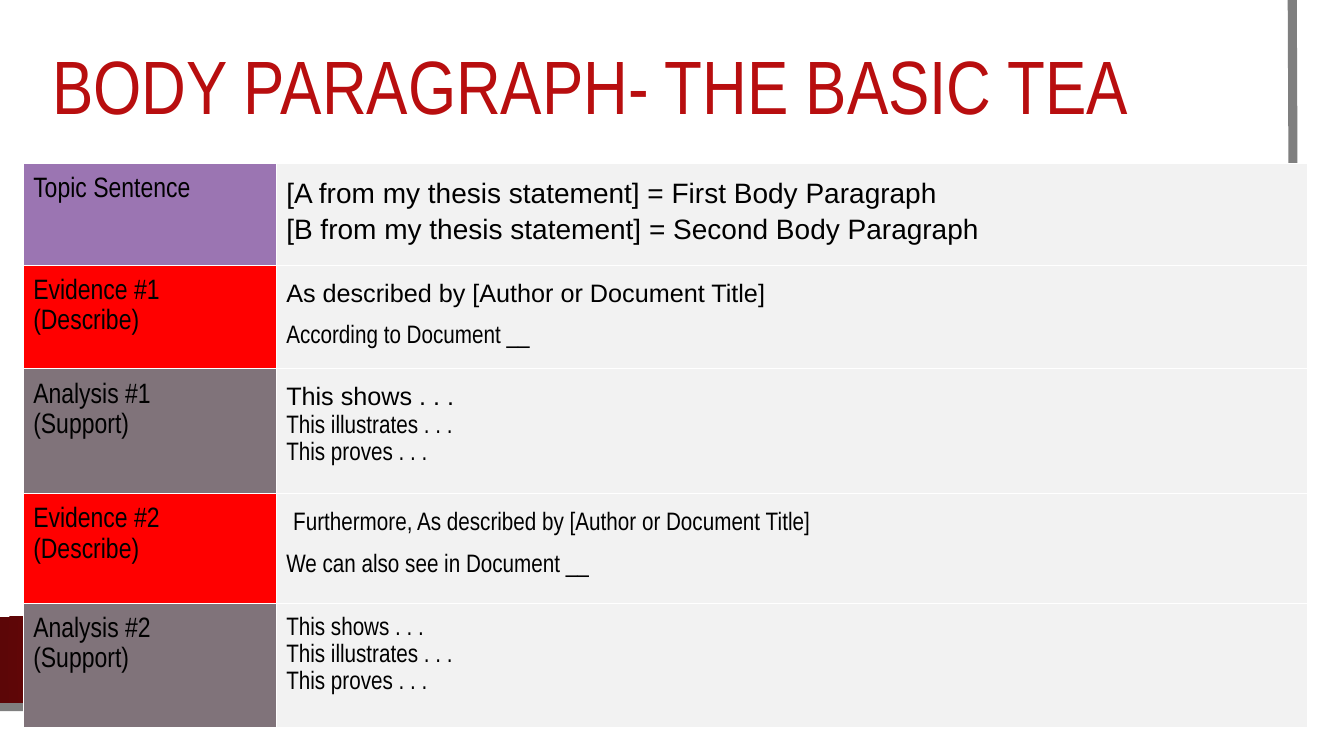
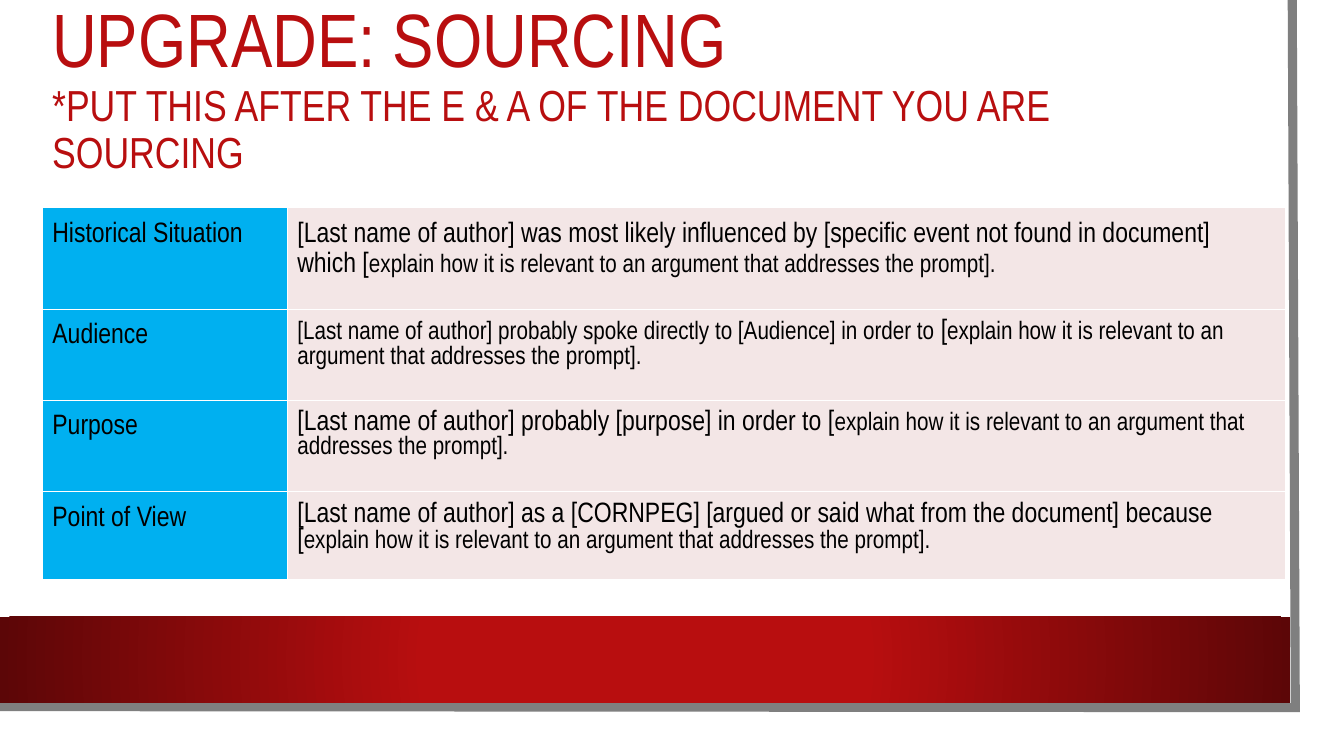
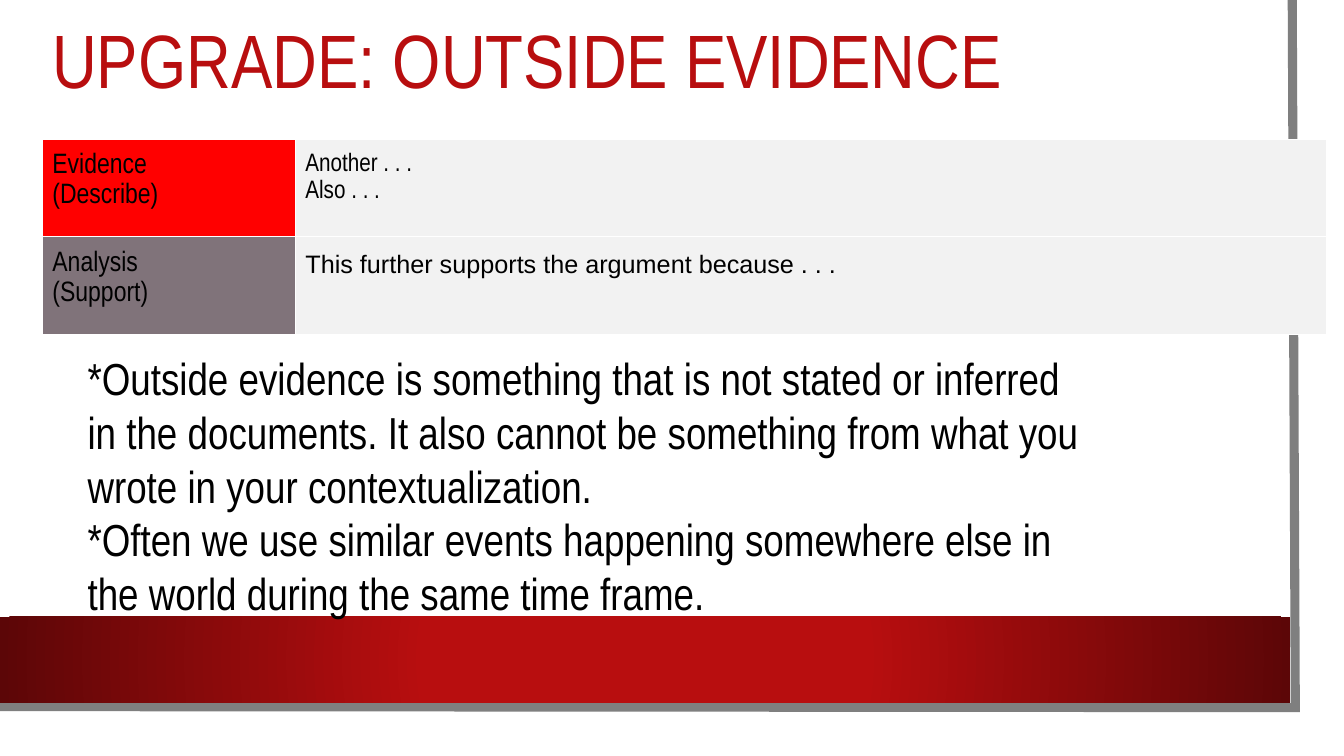
from dataclasses import dataclass

from lxml.etree import SubElement
from pptx import Presentation
from pptx.dml.color import RGBColor
from pptx.enum.shapes import MSO_SHAPE as Shape
from pptx.enum.text import MSO_ANCHOR as Anchor
from pptx.oxml import parse_xml
from pptx.oxml.ns import nsdecls, qn
from pptx.slide import Slide
from pptx.text.text import TextFrame
from pptx.util import Inches, Pt


@dataclass(frozen=True)
class Theme:
    red: str = "B80E0F"
    dark_red: str = "5C0607"
    frame: str = "7F7F7F"
    black: str = "000000"
    white: str = "FFFFFF"
    topic: str = "9B75B2"
    evidence: str = "FF0000"
    analysis: str = "80737A"
    sourcing: str = "00B0F0"
    plain: str = "F2F2F2"
    blush: str = "F3E6E6"
    narrow: str = "Arial Narrow"
    wide: str = "Arial"
    title: int = 54
    subtitle: int = 31
    body: int = 32
    label: int = 20
    small: int = 18


@dataclass(frozen=True)
class Run:
    text: str
    size: float = 18
    font: str = "Arial Narrow"


@dataclass(frozen=True)
class Para:
    runs: tuple[Run, ...]
    before: float = 0
    spacing: float | None = 1.15


@dataclass(frozen=True)
class Row:
    label: str
    fill: str
    height: float
    paras: tuple[Para, ...]


@dataclass(frozen=True)
class Grid:
    left: float
    top: float
    cols: tuple[float, float]
    fill: str
    rows: tuple[Row, ...]


T = Theme()
CELL = 0.1
SHOWS = "This shows . . ."
MORE_PROOF = ("This illustrates . . .", "This proves . . .")
EXPLAIN = Run("explain how it is relevant to an argument that addresses the prompt].")


def cells(n: float) -> int:
    return Inches(n * CELL)


def para(text: str, size: float = T.small, font: str = T.narrow, before: float = 0,
         spacing: float | None = 1.15) -> Para:
    return Para((Run(text, size, font),), before, spacing)


def mixed(*runs: Run, spacing: float | None = None) -> Para:
    return Para(runs, spacing=spacing)


def lines(*texts: str) -> tuple[Para, ...]:
    return tuple(para(text) for text in texts)


def write(tf: TextFrame, paras: tuple[Para, ...], *, color: str = T.black) -> None:
    tf.word_wrap = True
    for i, item in enumerate(paras):
        p = tf.add_paragraph() if i else tf.paragraphs[0]
        if item.spacing:
            p.line_spacing = item.spacing
        if item.before:
            p.space_before = Pt(item.before)
        for run in item.runs:
            r = p.add_run()
            r.text = run.text
            r.font.name = run.font
            r.font.size = Pt(run.size)
            r.font.color.rgb = RGBColor.from_string(color)


def add_text(s: Slide, box: tuple[float, float, float, float], paras: tuple[Para, ...],
             *, color: str = T.black, anchor: Anchor = Anchor.TOP) -> None:
    tf = s.shapes.add_textbox(*map(cells, box)).text_frame
    tf.vertical_anchor = anchor
    write(tf, paras, color=color)


def add_frame(s: Slide) -> None:
    outline = s.shapes.build_freeform(cells(128.2), 0)
    outline.add_line_segments([(cells(128.5), cells(70.2)), (cells(-0.3), cells(70.1))],
                              close=False)
    sp = outline.convert_to_shape()
    sp.shadow.inherit = False
    sp.fill.background()
    sp.line.color.rgb = RGBColor.from_string(T.frame)
    sp.line.width = Pt(6.5)
    SubElement(sp.line._get_or_add_ln(), qn("a:miter"), lim="800000")

    band = s.shapes.add_shape(Shape.RECTANGLE, 0, cells(61.2), cells(128), cells(8.5))
    band.shadow.inherit = False
    band.line.fill.background()
    stops = "".join(f'<a:gs pos="{pos}000"><a:srgbClr val="{color}"/></a:gs>'
                    for pos, color in ((0, T.red), (34, T.red), (100, T.dark_red)))
    band._element.spPr.find(qn("a:prstGeom")).addnext(parse_xml(
        f'<a:gradFill {nsdecls("a")} rotWithShape="1"><a:gsLst>{stops}</a:gsLst>'
        '<a:path path="circle"><a:fillToRect l="50000" t="50000" r="50000" b="50000"/>'
        '</a:path></a:gradFill>'))


def add_grid(s: Slide, grid: Grid) -> None:
    heights = [row.height for row in grid.rows]
    table = s.shapes.add_table(len(heights), 2, cells(grid.left), cells(grid.top),
                               cells(sum(grid.cols)), cells(sum(heights))).table
    table.first_row = table.horz_banding = False
    for col, width in zip(table.columns, grid.cols):
        col.width = cells(width)
    for i, row in enumerate(grid.rows):
        table.rows[i].height = cells(row.height)
        label = tuple(para(text, T.label) for text in row.label.split("\n"))
        for j, (paras, fill) in enumerate(((label, row.fill), (row.paras, grid.fill))):
            cell = table.cell(i, j)
            cell.margin_left = cell.margin_right = cells(1)
            cell.margin_top = cell.margin_bottom = cells(1)
            cell.fill.solid()
            cell.fill.fore_color.rgb = RGBColor.from_string(fill)
            for k, side in enumerate("LRTB"):
                cell._tc.tcPr.insert(k, parse_xml(
                    f'<a:ln{side} {nsdecls("a")} w="{Pt(1)}"><a:solidFill>'
                    f'<a:srgbClr val="{T.white}"/></a:solidFill></a:ln{side}>'))
            write(cell.text_frame, paras)


def add_page(prs: Presentation, title: str, grid: Grid, *, subtitle: str = "",
             title_height: float = 14.5) -> Slide:
    s = prs.slides.add_slide(prs.slide_layouts[6])
    add_frame(s)
    heading = (para(title, T.title, spacing=0.9),)
    if subtitle:
        heading += (para(subtitle, T.subtitle, spacing=0.9),)
    add_text(s, (4.2, 1.7, 115, title_height), heading, color=T.red, anchor=Anchor.MIDDLE)
    add_grid(s, grid)
    return s


BASIC = Grid(2.3, 16.2, (25.1, 102.3), T.plain, (
    Row("Topic Sentence", T.topic, 10.1, (
        para("[A from my thesis statement] = First Body Paragraph", T.label, T.wide),
        para("[B from my thesis statement] = Second Body Paragraph", T.label, T.wide))),
    Row("Evidence #1\n(Describe)", T.evidence, 9.1, (
        para("As described by [Author or Document Title]", font=T.wide),
        para("According to Document __", before=10))),
    Row("Analysis #1\n(Support)", T.analysis, 10.6,
        (para(SHOWS, font=T.wide), *lines(*MORE_PROOF))),
    Row("Evidence #2\n(Describe)", T.evidence, 10.9, (
        mixed(Run(" ", font=T.wide),
              Run("Furthermore, As described by [Author or Document Title]"), spacing=1.15),
        para("We can also see in Document __", before=10.5))),
    Row("Analysis #2\n(Support)", T.analysis, 11.8, lines(SHOWS, *MORE_PROOF)),
))

SOURCING = Grid(4.2, 20.6, (24.3, 99), T.blush, (
    Row("Historical Situation", T.sourcing, 10.1, (
        mixed(Run("[Last name of author] was most likely influenced by "
                  "[specific event not found in document] which [", T.label),
              EXPLAIN, spacing=1.15),)),
    Row("Audience", T.sourcing, 9, (
        mixed(Run("[Last name of author] probably spoke directly to [Audience] in order to "),
              Run("[", T.label), EXPLAIN),)),
    Row("Purpose", T.sourcing, 9.1, (
        mixed(Run("[Last name of author] probably [purpose] in order to [", T.label),
              EXPLAIN),)),
    Row("Point of View", T.sourcing, 7.7, (
        mixed(Run("[Last name of author] as a [CORNPEG] [argued or said what from the "
                  "document] because [", T.label), EXPLAIN),)),
))

OUTSIDE = Grid(4.2, 13.8, (25.1, 102.3), T.plain, (
    Row("Evidence\n(Describe)", T.evidence, 9, lines("Another . . .", "Also . . .")),
    Row("Analysis\n(Support)", T.analysis, 9.1, (
        para("This further supports the argument because . . .", font=T.wide),)),
))

OUTSIDE_NOTES = (
    "*Outside evidence is something that is not stated or inferred in the documents. "
    "It also cannot be something from what you wrote in your contextualization.",
    "*Often we use similar events happening somewhere else in the world during the same "
    "time frame.",
)


def main() -> None:
    prs = Presentation()
    prs.slide_width, prs.slide_height = cells(133.33), cells(75)
    add_page(prs, "BODY PARAGRAPH- THE BASIC TEA", BASIC)
    add_page(prs, "UPGRADE: SOURCING", SOURCING,
             subtitle="*PUT THIS AFTER THE E & A OF THE DOCUMENT YOU ARE SOURCING")
    s = add_page(prs, "UPGRADE: OUTSIDE EVIDENCE", OUTSIDE, title_height=9.3)
    add_text(s, (7.7, 34.3, 101.9, 27.9),
             tuple(para(text, T.body, spacing=None) for text in OUTSIDE_NOTES))
    prs.save("out.pptx")


if __name__ == "__main__":
    main()
